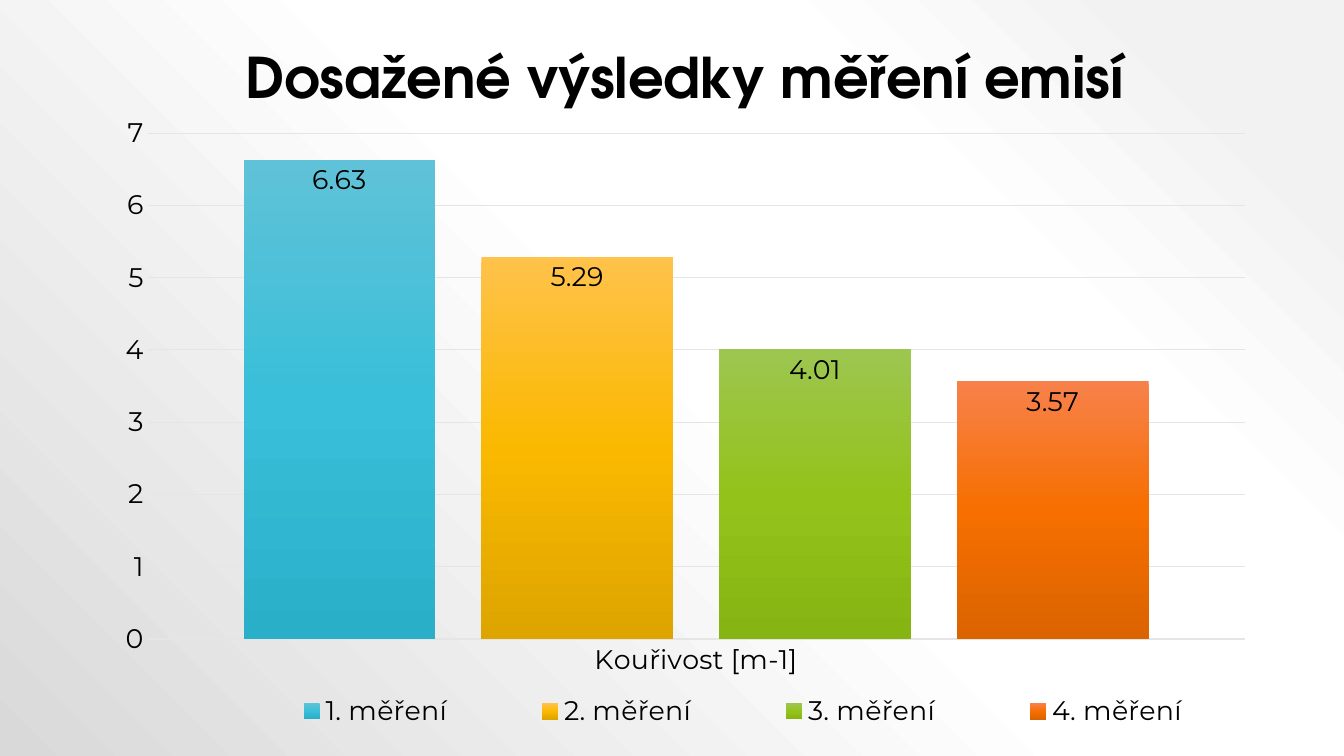
"""Build the slide with the column chart of measured emissions."""
from dataclasses import dataclass

from lxml import etree
from pptx import Presentation
from pptx.chart.data import CategoryChartData
from pptx.dml.color import RGBColor
from pptx.enum.chart import XL_CHART_TYPE as ChartType
from pptx.enum.chart import XL_LABEL_POSITION as LabelPosition
from pptx.enum.chart import XL_LEGEND_POSITION as LegendPosition
from pptx.enum.chart import XL_TICK_MARK as TickMark
from pptx.oxml.ns import qn
from pptx.util import Emu, Pt

BLACK = RGBColor(0x00, 0x00, 0x00)
GRID_GREY = RGBColor(0xE5, 0xE5, 0xE5)
PALE_GREY = RGBColor(0xF2, 0xF2, 0xF2)
WHITE = RGBColor(0xFF, 0xFF, 0xFF)
CORNER_GREY = RGBColor(0xD9, 0xD9, 0xD9)
BLUES = (RGBColor(0x5F, 0xC2, 0xD8), RGBColor(0x39, 0xBF, 0xD9), RGBColor(0x2A, 0xAF, 0xC9))
YELLOWS = (RGBColor(0xFF, 0xC2, 0x4B), RGBColor(0xFA, 0xB9, 0x00), RGBColor(0xDE, 0xA4, 0x00))
GREENS = (RGBColor(0x9D, 0xC6, 0x50), RGBColor(0x93, 0xC3, 0x1B), RGBColor(0x86, 0xB4, 0x12))
ORANGES = (RGBColor(0xF7, 0x81, 0x4B), RGBColor(0xF6, 0x6F, 0x00), RGBColor(0xDB, 0x63, 0x00))

BODY_FONT = "Montserrat"
TITLE_FONT = "TeX Gyre Adventor"
BODY_SIZE = Pt(19.2)
EMU_PER_PX = 914400 / 100.8


@dataclass(frozen=True)
class Measurement:
    name: str
    smoke: float
    shades: tuple[RGBColor, RGBColor, RGBColor]


@dataclass(frozen=True)
class Frame:
    left: float
    top: float
    width: float
    height: float


MEASUREMENTS = (
    Measurement("1. měření", 6.63, BLUES),
    Measurement("2. měření", 5.29, YELLOWS),
    Measurement("3. měření", 4.01, GREENS),
    Measurement("4. měření", 3.57, ORANGES),
)
CHART_FRAME = Frame(101, 21, 1167, 723)
PLOT_SHARE = Frame(0.04, 0.155, 0.94, 0.7)
LEGEND_SHARE = Frame(0.1, 0.92, 0.9, 0.07)


def px(length: float) -> Emu:
    """Turn pixels into EMU."""
    return Emu(round(length * EMU_PER_PX))


def style_font(font) -> None:
    """Give chart text its shared look."""
    font.name = BODY_FONT
    font.size = BODY_SIZE
    font.bold = False
    font.color.rgb = BLACK


def apply_gradient(fill, owner, stops: list[tuple[int, RGBColor]], radial: bool = False) -> None:
    """Fill the owner element with a vertical or a corner gradient."""
    fill.solid()
    solid = next(owner.iter(qn("a:solidFill")))
    gradient = etree.Element(qn("a:gradFill"), rotWithShape="1")
    stop_list = etree.SubElement(gradient, qn("a:gsLst"))
    for percent, color in stops:
        stop = etree.SubElement(stop_list, qn("a:gs"), pos=str(percent * 1000))
        etree.SubElement(stop, qn("a:srgbClr"), val=str(color))
    if radial:
        path = etree.SubElement(gradient, qn("a:path"), path="circle")
        etree.SubElement(path, qn("a:fillToRect"), l="100000", b="100000")
    else:
        etree.SubElement(gradient, qn("a:lin"), ang="5400000", scaled="0")
    solid.getparent().replace(solid, gradient)


def place_part(part, index: int, share: Frame, inner: bool = False) -> None:
    """Fix a chart part at a share of the chart area."""
    for present in part.findall(qn("c:layout")):
        part.remove(present)
    layout = etree.Element(qn("c:layout"))
    manual = etree.SubElement(layout, qn("c:manualLayout"))
    if inner:
        etree.SubElement(manual, qn("c:layoutTarget"), val="inner")
    for mode in ("xMode", "yMode"):
        etree.SubElement(manual, qn(f"c:{mode}"), val="edge")
    for tag, value in zip("xywh", (share.left, share.top, share.width, share.height)):
        etree.SubElement(manual, qn(f"c:{tag}"), val=str(value))
    part.insert(index, layout)


def add_title(chart) -> None:
    """Write the heading of the chart."""
    chart.has_title = True
    paragraph = chart.chart_title.text_frame.paragraphs[0]
    heading = paragraph.add_run()
    heading.text = "Dosažené výsledky měření emisí"
    heading.font.name = TITLE_FONT
    heading.font.size = Pt(40)
    heading.font.bold = True
    heading.font.color.rgb = BLACK


def style_axes(chart) -> None:
    """Format both axes and the gridlines."""
    for axis in (chart.category_axis, chart.value_axis):
        axis.major_tick_mark = axis.minor_tick_mark = TickMark.NONE
        style_font(axis.tick_labels.font)
    smoke_line = chart.category_axis.format.line
    smoke_line.color.rgb = GRID_GREY
    smoke_line.width = Pt(1)
    scale = chart.value_axis
    scale.minimum_scale, scale.maximum_scale, scale.major_unit = 0, 7, 1
    scale.format.line.fill.background()
    scale.major_gridlines.format.line.color.rgb = GRID_GREY
    scale.major_gridlines.format.line.width = Pt(0.75)


def style_columns(chart) -> None:
    """Colour and label one column per measurement."""
    columns = chart.plots[0]
    columns.gap_width = 100
    columns.overlap = -24
    columns.vary_by_categories = False
    for series, measurement in zip(columns.series, MEASUREMENTS):
        stops = list(zip((0, 50, 100), measurement.shades))
        apply_gradient(series.format.fill, series._element, stops)
        labels = series.data_labels
        labels.show_value = True
        labels.position = LabelPosition.INSIDE_END
        style_font(labels.font)


def add_emission_chart(slide) -> None:
    """Draw the chart with its title, axes and legend."""
    data = CategoryChartData()
    data.categories = ["Kouřivost [m-1]"]
    for measurement in MEASUREMENTS:
        data.add_series(measurement.name, [measurement.smoke])
    frame = CHART_FRAME
    chart = slide.shapes.add_chart(
        ChartType.COLUMN_CLUSTERED,
        px(frame.left), px(frame.top), px(frame.width), px(frame.height), data,
    ).chart
    style_font(chart.font)
    add_title(chart)
    style_axes(chart)
    style_columns(chart)
    chart.has_legend = True
    chart.legend.position = LegendPosition.BOTTOM
    chart.legend.include_in_layout = False
    style_font(chart.legend.font)
    place_part(chart.legend._element, 1, LEGEND_SHARE)
    place_part(next(chart._chartSpace.iter(qn("c:plotArea"))), 0, PLOT_SHARE, inner=True)


def main() -> None:
    """Build and save the presentation."""
    deck = Presentation()
    deck.slide_width, deck.slide_height = px(1344), px(756)
    slide = deck.slides.add_slide(deck.slide_layouts[6])
    backdrop = [(10, PALE_GREY), (28, WHITE), (48, WHITE), (100, CORNER_GREY)]
    apply_gradient(slide.background.fill, slide._element, backdrop, radial=True)
    add_emission_chart(slide)
    deck.save("out.pptx")


if __name__ == "__main__":
    main()
